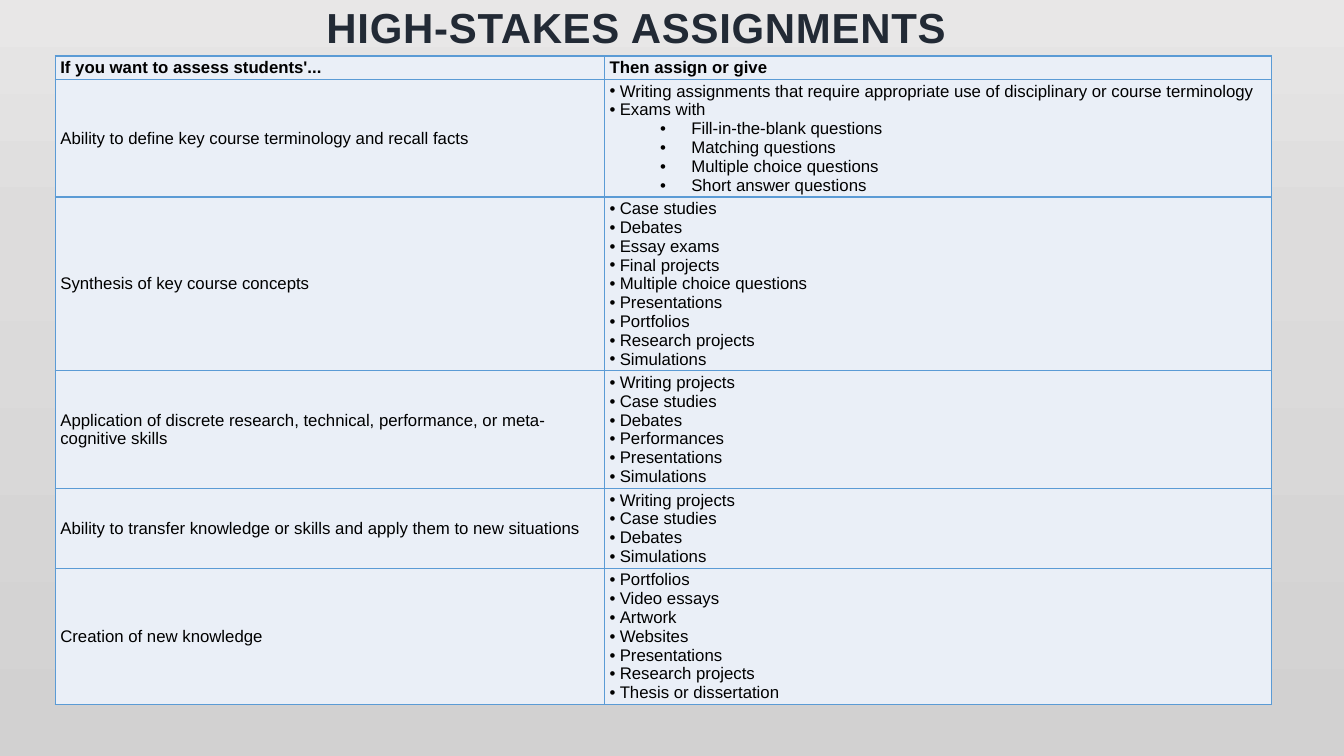
from copy import deepcopy

from lxml.etree import SubElement
from pptx import Presentation
from pptx.dml.color import RGBColor
from pptx.enum.text import MSO_ANCHOR, MSO_AUTO_SIZE, PP_ALIGN
from pptx.oxml.ns import qn
from pptx.util import Pt

BLACK = RGBColor(0x00, 0x00, 0x00)
NAVY = RGBColor(0x22, 0x2A, 0x35)
PALE_BLUE = RGBColor(0xEA, 0xEF, 0xF7)
BORDER_BLUE = RGBColor(0x5B, 0x9B, 0xD5)
BACKDROP = [
    (0, RGBColor(0xE8, 0xE7, 0xE7)),
    (0.31, RGBColor(0xDD, 0xDC, 0xDC)),
    (1, RGBColor(0xD2, 0xD1, 0xD1)),
]

LINE_HEIGHT = 13.41
CELL_MARGINS = {"margin_left": Pt(3.6), "margin_right": Pt(3.6),
                "margin_top": Pt(1.65), "margin_bottom": Pt(1.65)}
# Left margin and hanging indent of each bullet level
BULLET_INDENTS = [(Pt(7.2), Pt(-7.2)), (Pt(58.3), Pt(-22.3))]

HEADINGS = ("If you want to assess students'...", "Then assign or give")
ASSIGNMENTS = [
    ("Ability to define key course terminology and recall facts",
     ["Writing assignments that require appropriate use of disciplinary or course terminology",
      "Exams with",
      ["Fill-in-the-blank questions", "Matching questions",
       "Multiple choice questions", "Short answer questions"]]),
    ("Synthesis of key course concepts",
     ["Case studies", "Debates", "Essay exams", "Final projects",
      "Multiple choice questions", "Presentations", "Portfolios",
      "Research projects", "Simulations"]),
    ("Application of discrete research, technical, performance, or meta-cognitive skills",
     ["Writing projects", "Case studies", "Debates", "Performances",
      "Presentations", "Simulations"]),
    ("Ability to transfer knowledge or skills and apply them to new situations",
     ["Writing projects", "Case studies", "Debates", "Simulations"]),
    ("Creation of new knowledge",
     ["Portfolios", "Video essays", "Artwork", "Websites", "Presentations",
      "Research projects", "Thesis or dissertation"]),
]


def apply_format(target, values):
    for name, value in values.items():
        setattr(target, name, value)


def paint_background(slide):
    fill = slide.background.fill
    fill.gradient()
    fill.gradient_angle = 270
    stop_list = slide.element.find(".//" + qn("a:gsLst"))
    stop_list.append(deepcopy(stop_list[-1]))
    for stop, (position, color) in zip(fill.gradient_stops, BACKDROP):
        stop.position = position
        stop.color.rgb = color


def add_title(slide, left, top, width, height):
    title = slide.shapes.title
    apply_format(title, {"left": left, "top": top, "width": width, "height": height})
    frame = title.text_frame
    apply_format(frame, {"vertical_anchor": MSO_ANCHOR.BOTTOM, "word_wrap": True,
                         "auto_size": MSO_AUTO_SIZE.NONE})
    heading = frame.paragraphs[0]
    heading.alignment = PP_ALIGN.LEFT
    run = heading.add_run()
    run.text = "HIGH-STAKES ASSIGNMENTS"
    apply_format(run.font, {"name": "Arial", "size": Pt(30), "bold": True})
    run.font.color.rgb = NAVY
    run.font._element.set("spc", "50")


def flatten(items, level=0):
    """Yield (text, level) for a nested list of bullets."""
    for item in items:
        if isinstance(item, list):
            yield from flatten(item, level + 1)
        else:
            yield item, level


def add_bullet(paragraph, level):
    paragraph.level = level
    margin, indent = BULLET_INDENTS[level]
    properties = paragraph._p.get_or_add_pPr()
    properties.set("marL", str(margin))
    properties.set("indent", str(indent))
    SubElement(properties, qn("a:buFont"), typeface="Arial")
    SubElement(properties, qn("a:buChar"), char="•")


def add_borders(cell):
    """Outline the cell; borders must precede the fill in its properties."""
    properties = cell._tc.get_or_add_tcPr()
    for side in ("a:lnL", "a:lnR", "a:lnT", "a:lnB"):
        line = SubElement(properties, qn(side), w=str(Pt(1)))
        solid = SubElement(line, qn("a:solidFill"))
        SubElement(solid, qn("a:srgbClr"), val=str(BORDER_BLUE))


def fill_cell(cell, lines, bold=False, bulleted=False):
    add_borders(cell)
    cell.fill.solid()
    cell.fill.fore_color.rgb = PALE_BLUE
    apply_format(cell, CELL_MARGINS)
    cell.vertical_anchor = MSO_ANCHOR.MIDDLE
    frame = cell.text_frame
    for index, (text, level) in enumerate(lines):
        paragraph = frame.add_paragraph() if index else frame.paragraphs[0]
        if bulleted:
            add_bullet(paragraph, level)
        run = paragraph.add_run()
        run.text = text
        apply_format(run.font, {"name": "Arial", "size": Pt(12), "bold": bold})
        run.font.color.rgb = BLACK


def add_assignment_table(slide, left, top, width, height):
    table = slide.shapes.add_table(len(ASSIGNMENTS) + 1, 2, left, top, width, height).table
    apply_format(table, {"first_row": False, "horz_banding": False})
    goal_width = Pt(392.4)
    table.columns[0].width = goal_width
    table.columns[1].width = width - goal_width

    table.rows[0].height = Pt(LINE_HEIGHT + 3.3)
    for column, heading in enumerate(HEADINGS):
        fill_cell(table.cell(0, column), [(heading, 0)], bold=True)
    for row, (goal, tasks) in enumerate(ASSIGNMENTS, start=1):
        bullets = list(flatten(tasks))
        table.rows[row].height = Pt(LINE_HEIGHT * len(bullets) + 3.3)
        fill_cell(table.cell(row, 0), [(goal, 0)])
        fill_cell(table.cell(row, 1), bullets, bulleted=True)


def main():
    presentation = Presentation()
    presentation.slide_width = Pt(960)
    presentation.slide_height = Pt(540)
    slide = presentation.slides.add_slide(presentation.slide_layouts[5])
    paint_background(slide)
    add_title(slide, Pt(226), Pt(-15), Pt(832), Pt(55.4))
    add_assignment_table(slide, Pt(39.5), Pt(40), Pt(869), Pt(462.5))
    presentation.save("out.pptx")


if __name__ == "__main__":
    main()
